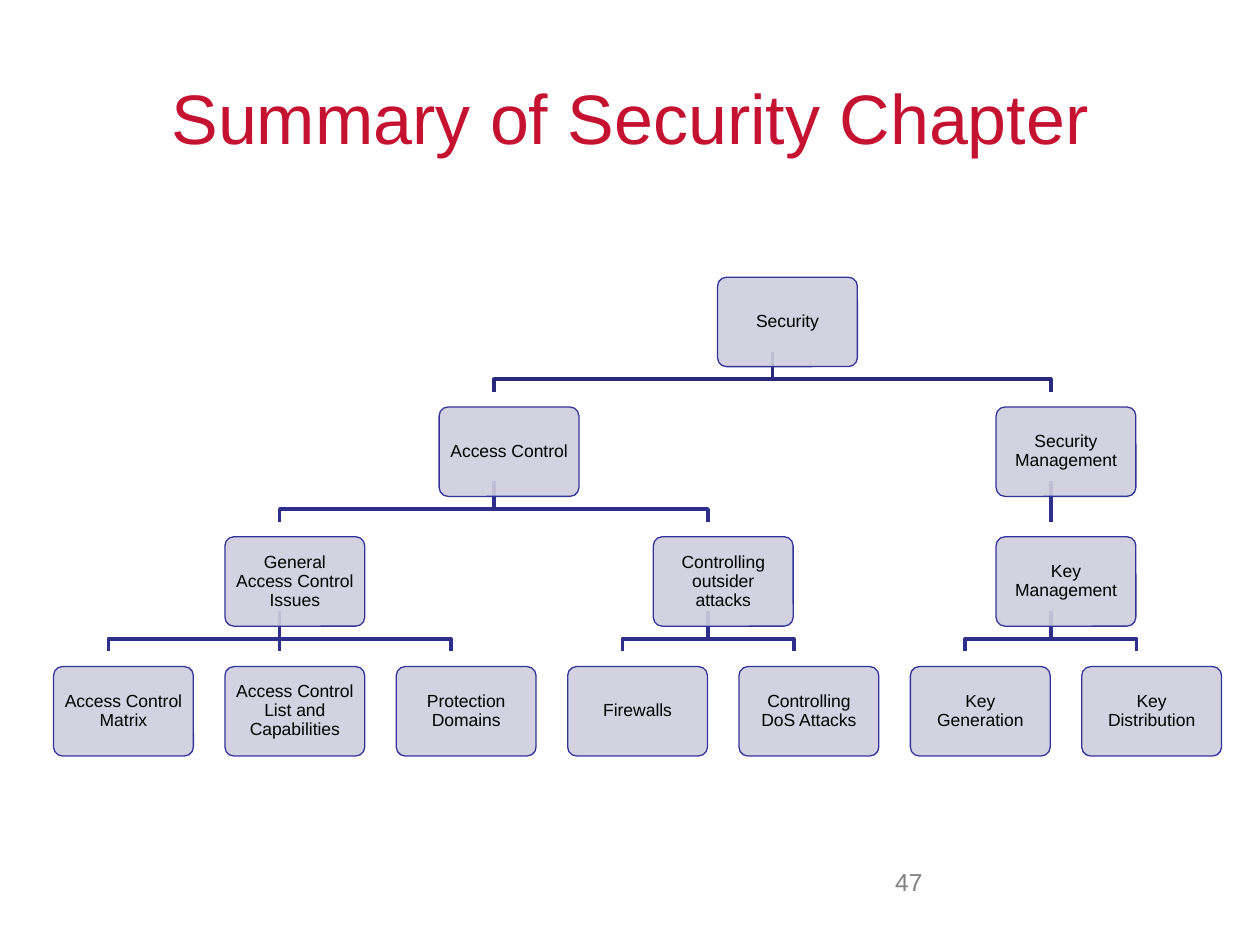
from dataclasses import dataclass, field
from itertools import count
from typing import Any, Iterator, Optional

from lxml import etree
from pptx import Presentation
from pptx.dml.color import RGBColor
from pptx.enum import shapes, text
from pptx.oxml.ns import qn
from pptx.util import Inches, Pt

COLORS = {
    "title": "C41230",
    "box": "CECEDE",
    "border": "333399",
    "top_link": "29297B",
    "link": "2E2E8B",
    "label": "000000",
    "number": "808080",
    "white": "FFFFFF",
}
FONT = "Arial"
FIRST_X, COLUMN_STEP = 0.86, 1.36
FIRST_Y, ROW_STEP = 2.08, 1.03
BOX_W, BOX_H = 1.11, 0.71
FRONT_SHIFT = 0.12
ELBOW_DROP = 0.22
BOX_FRAME = dict(word_wrap=True, vertical_anchor=text.MSO_ANCHOR.MIDDLE,
                 margin_left=Inches(0.06), margin_right=Inches(0.06),
                 margin_top=Inches(0.06), margin_bottom=Inches(0.06))


@dataclass
class Node:
    label: str
    children: list["Node"] = field(default_factory=list)
    x: float = 0
    depth: int = 0
    back: Optional[Any] = None

    @property
    def top(self) -> float:
        return FIRST_Y + ROW_STEP * self.depth

    @property
    def bottom(self) -> float:
        return self.top + BOX_H


TREE = Node("Security", [
    Node("Access Control", [
        Node("General Access Control Issues", [
            Node("Access Control Matrix"),
            Node("Access Control List and Capabilities"),
            Node("Protection Domains"),
        ]),
        Node("Controlling outsider attacks", [
            Node("Firewalls"),
            Node("Controlling DoS Attacks"),
        ]),
    ]),
    Node("Security Management", [
        Node("Key Management", [
            Node("Key Generation"),
            Node("Key Distribution"),
        ]),
    ]),
])


def rgb(name: str) -> RGBColor:
    return RGBColor.from_string(COLORS[name])


def apply(target: Any, values: dict[str, Any]) -> None:
    for name, value in values.items():
        setattr(target, name, value)


def write(tf: Any, words: str, size: float, color: str, **para: Any) -> None:
    p = tf.paragraphs[0]
    apply(p, para)
    r = p.add_run()
    r.text = words
    apply(r.font, dict(name=FONT, size=Pt(size)))
    r.font.color.rgb = rgb(color)


def place(node: Node, columns: Iterator[int], depth: int = 0) -> None:
    """Give each leaf the next column and centre each parent over its children."""
    node.depth = depth
    for child in node.children:
        place(child, columns, depth + 1)
    if node.children:
        node.x = (node.children[0].x + node.children[-1].x) / 2
    else:
        node.x = FIRST_X + COLUMN_STEP * next(columns)


def walk(node: Node) -> Iterator[Node]:
    yield node
    for child in node.children:
        yield from walk(child)


def add_box(slide: Any, node: Node, fill: str, shift: float) -> Any:
    sp = slide.shapes.add_shape(
        shapes.MSO_SHAPE.ROUNDED_RECTANGLE, Inches(node.x - BOX_W / 2 + shift),
        Inches(node.top + shift), Inches(BOX_W), Inches(BOX_H))
    sp.adjustments[0] = 0.1
    sp.shadow.inherit = False
    sp.fill.solid()
    sp.fill.fore_color.rgb = rgb(fill)
    sp.line.fill.background()
    return sp


def add_front(slide: Any, node: Node) -> None:
    """Draw the labelled, slightly transparent box."""
    sp = add_box(slide, node, "box", FRONT_SHIFT)
    color = sp._element.spPr.find(qn("a:solidFill"))[0]
    etree.SubElement(color, qn("a:alpha"), val="90000")
    sp.line.color.rgb = rgb("border")
    sp.line.width = Pt(0.75)
    apply(sp.text_frame, BOX_FRAME)
    write(sp.text_frame, node.label, 10, "label",
          alignment=text.PP_ALIGN.CENTER, line_spacing=0.9)


def add_link(slide: Any, parent: Node, child: Node) -> None:
    x1, y1 = Inches(parent.x), Inches(parent.bottom)
    x2, y2 = Inches(child.x), Inches(child.top)
    if abs(parent.x - child.x) < 0.01:
        link = slide.shapes.add_connector(
            shapes.MSO_CONNECTOR.STRAIGHT, x1, y1, x2, y2)
        link.begin_connect(parent.back, 2)
        link.end_connect(child.back, 0)
        etree.SubElement(link._element.spPr, qn("a:effectLst"))
    else:
        bend = Inches(parent.bottom + ELBOW_DROP)
        builder = slide.shapes.build_freeform(x1, y1)
        builder.add_line_segments([(x1, bend), (x2, bend), (x2, y2)], close=False)
        link = builder.convert_to_shape()
        link.shadow.inherit = False
        link.fill.background()
    link.line.color.rgb = rgb("link" if parent.depth else "top_link")
    link.line.width = Pt(2)


def add_tree(slide: Any, root: Node) -> None:
    place(root, count())
    nodes = list(walk(root))
    for node in nodes[1:]:
        node.back = add_box(slide, node, "white", 0)
    for node in nodes:
        for child in node.children:
            add_link(slide, node, child)
    for node in nodes:
        add_front(slide, node)


def main() -> None:
    prs = Presentation()
    apply(prs, dict(slide_width=Inches(10), slide_height=Inches(7.5)))
    slide = prs.slides.add_slide(prs.slide_layouts[5])

    title = slide.shapes.title
    apply(title, dict(left=Inches(0.5), top=Inches(0.3),
                      width=Inches(9), height=Inches(1.25)))
    title.text_frame.vertical_anchor = text.MSO_ANCHOR.MIDDLE
    write(title.text_frame, "Summary of Security Chapter", 40, "title",
          alignment=text.PP_ALIGN.CENTER)

    add_tree(slide, TREE)

    number = slide.shapes.add_textbox(
        Inches(6.5), Inches(6.83), Inches(0.92), Inches(0.52))
    number.text_frame.word_wrap = True
    write(number.text_frame, "47", 14, "number", alignment=text.PP_ALIGN.RIGHT)

    prs.save("out.pptx")


if __name__ == "__main__":
    main()
